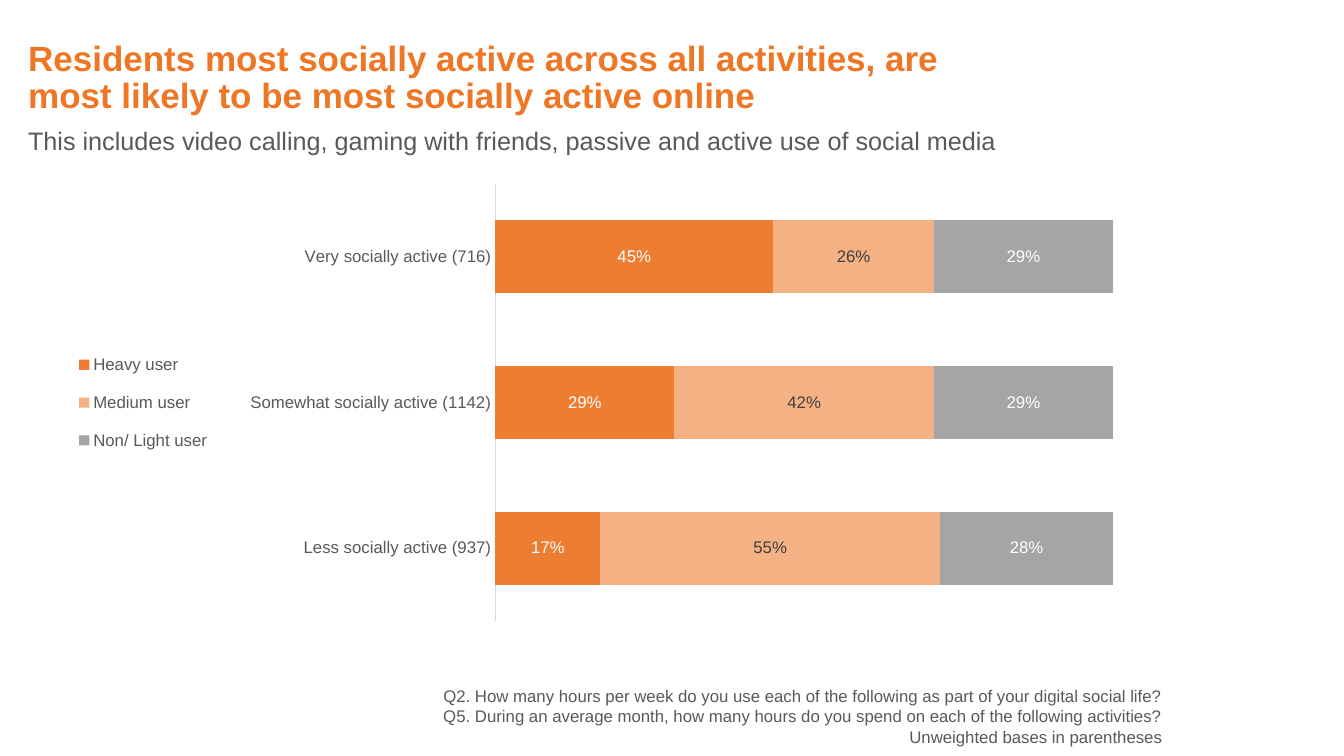
from dataclasses import dataclass

from lxml import etree
from pptx import Presentation
from pptx.chart.data import CategoryChartData
from pptx.dml.color import RGBColor
from pptx.enum import chart as charts, text
from pptx.oxml.ns import qn
from pptx.util import Inches, Pt


@dataclass(frozen=True)
class Theme:
    font: str = "Arial"
    accent: str = "EE7624"
    grey: str = "595959"
    axis: str = "D9D9D9"
    title_size: int = 25
    subtitle_size: int = 18
    small_size: int = 12


theme = Theme()


def style_font(font, size, color, bold=False):
    font.name = theme.font
    font.size = Pt(size)
    font.bold = bold
    font.color.rgb = RGBColor.from_string(color)


def make_layout(x, y, width, height, inner=False):
    layout = etree.Element(qn("c:layout"))
    manual = etree.SubElement(layout, qn("c:manualLayout"))
    settings = [("layoutTarget", "inner")] if inner else []
    settings += [("xMode", "edge"), ("yMode", "edge"), ("x", x), ("y", y), ("w", width), ("h", height)]
    for tag, value in settings:
        etree.SubElement(manual, qn(f"c:{tag}")).set("val", str(value))
    return layout


deck = Presentation()
deck.slide_width = Inches(13.33)
deck.slide_height = Inches(7.5)
page = deck.slides.add_slide(deck.slide_layouts[5])

title = page.shapes.title
title.left, title.top, title.width, title.height = Inches(0.18), Inches(0.45), Inches(9.28), Inches(0.66)
title.text_frame.text = (
    "Residents most socially active across all activities, are most likely to be most socially active online"
)
title.text_frame.word_wrap = True
title.text_frame.auto_size = text.MSO_AUTO_SIZE.NONE
title.text_frame.vertical_anchor = text.MSO_ANCHOR.MIDDLE
para = title.text_frame.paragraphs[0]
para.alignment = text.PP_ALIGN.LEFT
para.line_spacing = 0.9
para.space_before = Pt(0)
style_font(para.runs[0].font, theme.title_size, theme.accent, bold=True)

data = CategoryChartData(number_format="0%")
data.categories = ["Very socially active (716)", "Somewhat socially active (1142)", "Less socially active (937)"]
user_groups = [
    ("Heavy user", (0.45, 0.29, 0.17), "ED7D31", "FFFFFF"),
    ("Medium user", (0.26, 0.42, 0.55), "F4B183", "404040"),
    ("Non/ Light user", (0.29, 0.29, 0.28), "A5A5A5", "FFFFFF"),
]
for name, shares, fill_color, label_color in user_groups:
    data.add_series(name, shares)

chart = page.shapes.add_chart(
    charts.XL_CHART_TYPE.BAR_STACKED_100, Inches(-0.08), Inches(1.63), Inches(11.12), Inches(4.73), data
).chart
chart.has_title = False
style_font(chart.font, theme.small_size, theme.grey)

plot = chart.plots[0]
plot.gap_width = 100
plot.overlap = 100
plot.vary_by_categories = False
for series, (name, shares, fill_color, label_color) in zip(plot.series, user_groups):
    series.format.fill.solid()
    series.format.fill.fore_color.rgb = RGBColor.from_string(fill_color)
    labels = series.data_labels
    labels.show_value = True
    labels.number_format = "0%"
    labels.number_format_is_linked = False
    labels.position = charts.XL_LABEL_POSITION.CENTER
    style_font(labels.font, theme.small_size, label_color)

categories = chart.category_axis
categories.reverse_order = True
categories.has_major_gridlines = False
categories.major_tick_mark = charts.XL_TICK_MARK.NONE
categories.format.line.color.rgb = RGBColor.from_string(theme.axis)
categories.format.line.width = Pt(0.75)
style_font(categories.tick_labels.font, theme.small_size, theme.grey)

values = chart.value_axis
values.visible = False
values.has_major_gridlines = False
values.minimum_scale = 0
values.maximum_scale = 1

chart.has_legend = True
legend = chart.legend
legend.position = charts.XL_LEGEND_POSITION.BOTTOM
legend.include_in_layout = False
style_font(legend.font, theme.small_size, theme.grey)

chart_space = chart.element
for old_layout in chart_space.findall(".//" + qn("c:layout")):
    old_layout.getparent().remove(old_layout)
plot_area = chart_space.find(".//" + qn("c:plotArea"))
plot_area.insert(0, make_layout(0.449, 0.041, 0.551, 0.917, inner=True))
legend_position = chart_space.find(".//" + qn("c:legendPos"))
legend_position.addnext(make_layout(0.07, 0.36, 0.13, 0.28))

notes = page.shapes.add_textbox(Inches(2.96), Inches(6.8), Inches(8.57), Inches(0.61))
frame = notes.text_frame
frame.text = "\n".join([
    "Q2. How many hours per week do you use each of the following as part of your digital social life?",
    "Q5. During an average month, how many hours do you spend on each of the following activities?",
    "Unweighted bases in parentheses",
])
frame.word_wrap = True
frame.auto_size = text.MSO_AUTO_SIZE.SHAPE_TO_FIT_TEXT
frame.vertical_anchor = text.MSO_ANCHOR.MIDDLE
frame.margin_left = frame.margin_top = frame.margin_right = frame.margin_bottom = Inches(0)
for para in frame.paragraphs:
    para.alignment = text.PP_ALIGN.RIGHT
    style_font(para.runs[0].font, theme.small_size, theme.grey)

subtitle = page.shapes.add_textbox(Inches(0.18), Inches(1.19), Inches(10.15), Inches(0.4))
frame = subtitle.text_frame
frame.text = "This includes video calling, gaming with friends, passive and active use of social media"
frame.word_wrap = True
frame.auto_size = text.MSO_AUTO_SIZE.SHAPE_TO_FIT_TEXT
style_font(frame.paragraphs[0].runs[0].font, theme.subtitle_size, theme.grey)

deck.save("out.pptx")
